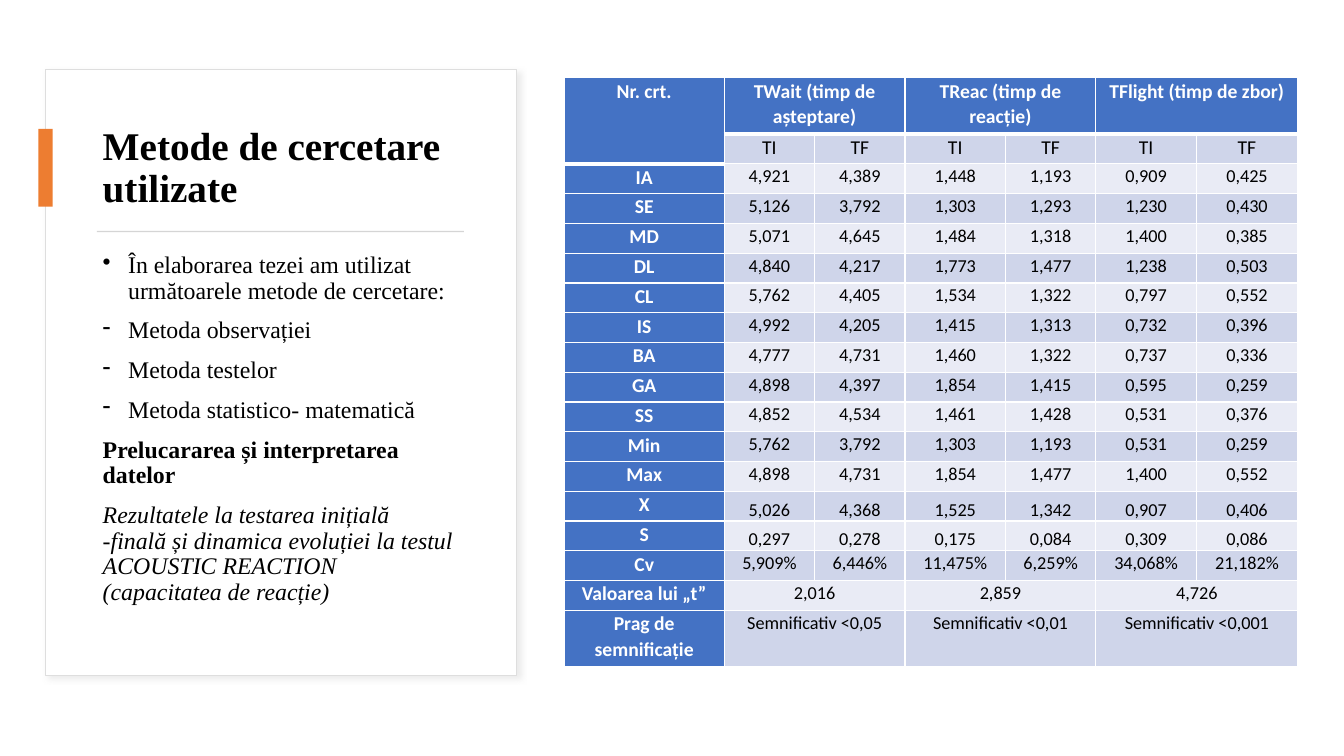
from lxml import etree
from pptx import Presentation
from pptx.dml.color import RGBColor
from pptx.enum.shapes import MSO_SHAPE
from pptx.enum.text import MSO_ANCHOR, PP_ALIGN
from pptx.oxml import parse_xml
from pptx.oxml.ns import nsdecls, qn
from pptx.util import Cm, Pt

RECTANGLE = MSO_SHAPE.RECTANGLE
TOP, MIDDLE, BOTTOM = MSO_ANCHOR.TOP, MSO_ANCHOR.MIDDLE, MSO_ANCHOR.BOTTOM
CENTER = PP_ALIGN.CENTER

COLORS = {
    "white": "FFFFFF", "black": "000000", "outline": "DEDEDE", "shadow": "D9D9D9",
    "accent": "ED7D31", "rule": "D5D5D5", "header": "4472C4",
    "light_band": "E9EBF5", "dark_band": "CFD5EA",
}
SERIF, SANS = "Times New Roman", "Calibri"

METHODS = [
    ("În elaborarea tezei am utilizat următoarele metode de cercetare:", "•", False, False),
    ("Metoda observației", "-", False, False),
    ("Metoda testelor", "-", False, False),
    ("Metoda statistico- matematică", "-", False, False),
    ("Prelucararea și interpretarea datelor", None, True, False),
    ("Rezultatele la testarea inițială -finală și dinamica evoluției la testul "
     "ACOUSTIC REACTION (capacitatea de reacție)", None, False, True),
]

RESULTS = [
    ["Nr. crt.", "TWait (timp de așteptare)", "TReac (timp de reacție)", "TFlight (timp de zbor)"],
    ["", "TI", "TF", "TI", "TF", "TI", "TF"],
    ["IA", "4,921", "4,389", "1,448", "1,193", "0,909", "0,425"],
    ["SE", "5,126", "3,792", "1,303", "1,293", "1,230", "0,430"],
    ["MD", "5,071", "4,645", "1,484", "1,318", "1,400", "0,385"],
    ["DL", "4,840", "4,217", "1,773", "1,477", "1,238", "0,503"],
    ["CL", "5,762", "4,405", "1,534", "1,322", "0,797", "0,552"],
    ["IS", "4,992", "4,205", "1,415", "1,313", "0,732", "0,396"],
    ["BA", "4,777", "4,731", "1,460", "1,322", "0,737", "0,336"],
    ["GA", "4,898", "4,397", "1,854", "1,415", "0,595", "0,259"],
    ["SS", "4,852", "4,534", "1,461", "1,428", "0,531", "0,376"],
    ["Min", "5,762", "3,792", "1,303", "1,193", "0,531", "0,259"],
    ["Max", "4,898", "4,731", "1,854", "1,477", "1,400", "0,552"],
    ["X", "5,026", "4,368", "1,525", "1,342", "0,907", "0,406"],
    ["S", "0,297", "0,278", "0,175", "0,084", "0,309", "0,086"],
    ["Cv", "5,909%", "6,446%", "11,475%", "6,259%", "34,068%", "21,182%"],
    ["Valoarea lui „t”", "2,016", "2,859", "4,726"],
    ["Prag de semnificație", "Semnificativ <0,05", "Semnificativ <0,01", "Semnificativ <0,001"],
]
COLUMN_WIDTHS = [4.03, 2.28, 2.28, 2.53, 2.28, 2.53, 2.56]
TALL_ROW, SHORT_ROW = 1.42, 0.75


class SlideBuilder:
    def __init__(self, page, colors):
        self.page = page
        self.colors = colors

    def color(self, name):
        return RGBColor.from_string(self.colors[name])

    def format_runs(self, para, font, size, color="black", bold=False, italic=False):
        for span in para.runs:
            span.font.name = font
            span.font.size = Pt(size)
            span.font.bold = bold
            span.font.italic = italic
            span.font.color.rgb = self.color(color)

    def rectangle(self, left, top, width, height, fill, outline=None):
        box = self.page.shapes.add_shape(RECTANGLE, Cm(left), Cm(top), Cm(width), Cm(height))
        box.shadow.inherit = False
        box.fill.solid()
        box.fill.fore_color.rgb = self.color(fill)
        if outline:
            box.line.color.rgb = self.color(outline)
            box.line.width = Pt(0.75)
        else:
            box.line.fill.background()
        return box

    def drop_shadow(self, box):
        effects = box._element.spPr.find(qn("a:effectLst"))
        effects.append(parse_xml(
            f'<a:outerShdw {nsdecls("a")} blurRad="{Pt(4)}" dist="{Pt(3)}" dir="2700000" '
            f'algn="tl" rotWithShape="0"><a:srgbClr val="{self.colors["shadow"]}">'
            '<a:alpha val="50000"/></a:srgbClr></a:outerShdw>'))

    def text_box(self, left, top, width, height, anchor):
        box = self.page.shapes.add_textbox(Cm(left), Cm(top), Cm(width), Cm(height))
        box.text_frame.word_wrap = True
        box.text_frame.vertical_anchor = anchor
        return box.text_frame

    def title(self, text, *area):
        frame = self.text_box(*area, MIDDLE)
        frame.text = text
        para = frame.paragraphs[0]
        para.line_spacing = 0.9
        self.format_runs(para, SERIF, 28, bold=True)

    def bullet(self, para, mark):
        properties = para._p.get_or_add_pPr()
        properties.set("marL", str(Cm(0.64)))
        properties.set("indent", str(-Cm(0.64)))
        etree.SubElement(properties, qn("a:buChar")).set("char", mark)

    def body(self, items, *area):
        frame = self.text_box(*area, TOP)
        for index, (text, mark, bold, italic) in enumerate(items):
            para = frame.add_paragraph() if index else frame.paragraphs[0]
            para.text = text
            para.line_spacing = 0.9
            para.space_before = Pt(10)
            if mark:
                self.bullet(para, mark)
            self.format_runs(para, SERIF, 17, bold=bold, italic=italic)

    def cell_borders(self, cell, bottom_width):
        properties = cell._tc.get_or_add_tcPr()
        for side, width in (("L", 1), ("R", 1), ("T", 1), ("B", bottom_width)):
            properties.append(parse_xml(
                f'<a:ln{side} {nsdecls("a")} w="{Pt(width)}"><a:solidFill>'
                f'<a:srgbClr val="{self.colors["white"]}"/></a:solidFill></a:ln{side}>'))

    def style_cell(self, cell, row, column):
        is_header = row == 0 or column == 0
        self.cell_borders(cell, 3 if row == 0 or (row == 1 and column == 0) else 1)
        cell.fill.solid()
        band = "dark_band" if row % 2 else "light_band"
        cell.fill.fore_color.rgb = self.color("header" if is_header else band)
        cell.margin_left = cell.margin_right = Cm(0.18)
        cell.margin_top = cell.margin_bottom = 0
        is_statistic = RESULTS[row][0] in ("X", "S") and column > 0
        cell.vertical_anchor = BOTTOM if is_statistic else TOP
        para = cell.text_frame.paragraphs[0]
        para.alignment = CENTER
        para.line_spacing = 1.07
        size = 14 if is_header or row == 1 else 13
        self.format_runs(para, SANS, size, "white" if is_header else "black", is_header)

    def table(self, rows, widths, left, top):
        heights = [TALL_ROW if row in (0, len(rows) - 1) else SHORT_ROW for row in range(len(rows))]
        table = self.page.shapes.add_table(
            len(rows), len(widths), Cm(left), Cm(top), Cm(sum(widths)), Cm(sum(heights))).table
        table.first_row = False
        table.horz_banding = False
        for column, width in enumerate(widths):
            table.columns[column].width = Cm(width)
        for row, values in enumerate(rows):
            table.rows[row].height = Cm(heights[row])
            paired = len(values) < len(widths)
            for index, text in enumerate(values):
                column = 2 * index - 1 if paired and index else index
                if text:
                    table.cell(row, column).text_frame.text = text
                if paired and index:
                    table.cell(row, column).merge(table.cell(row, column + 1))
            for column in range(len(widths)):
                self.style_cell(table.cell(row, column), row, column)
        table.cell(0, 0).merge(table.cell(1, 0))


def main():
    deck = Presentation()
    deck.slide_width, deck.slide_height = Cm(33.87), Cm(19.05)
    page = deck.slides.add_slide(deck.slide_layouts[6])
    builder = SlideBuilder(page, COLORS)
    card = builder.rectangle(1.14, 1.75, 11.89, 15.27, "white", "outline")
    builder.drop_shadow(card)
    builder.title("Metode de cercetare utilizate", 2.34, 2.72, 9.47, 3.07)
    builder.rectangle(0.97, 3.25, 0.36, 1.96, "accent")
    builder.rectangle(2.44, 5.82, 9.25, 0.03, "rule")
    builder.body(METHODS, 2.34, 6.25, 9.47, 9.88)
    builder.table(RESULTS, COLUMN_WIDTHS, 14.22, 1.96)
    deck.save("out.pptx")


if __name__ == "__main__":
    main()
